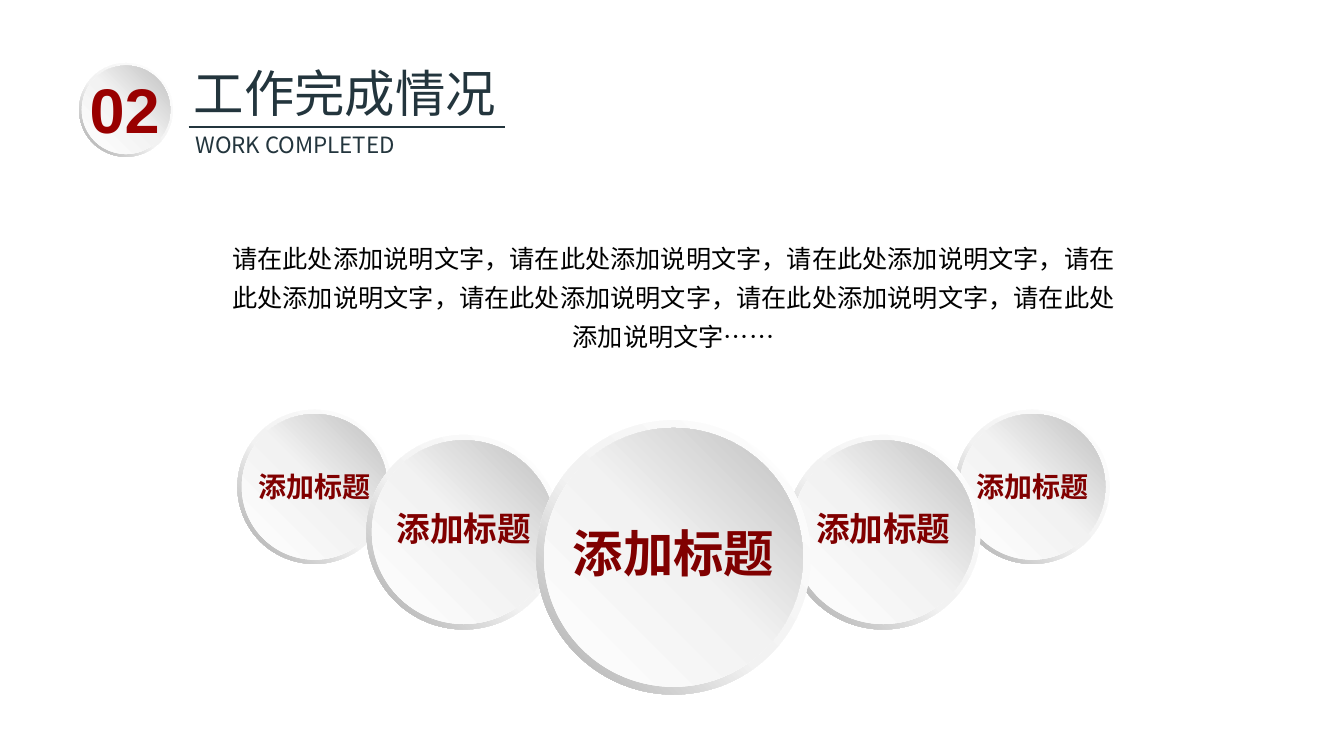
from lxml import etree
from pptx import Presentation
from pptx.dml.color import RGBColor
from pptx.enum import shapes, text
from pptx.oxml import parse_xml
from pptx.oxml.ns import nsdecls, qn
from pptx.util import Inches, Pt

CJK = "Noto Sans CJK SC"
SLATE = RGBColor(0x23, 0x35, 0x3D)
MAROON = RGBColor(0x80, 0x00, 0x00)
RED = RGBColor(0x99, 0x00, 0x00)
BLACK = RGBColor(0x00, 0x00, 0x00)
WHITE = RGBColor(0xFF, 0xFF, 0xFF)
PALE = RGBColor(0xF2, 0xF2, 0xF2)
SILVER = RGBColor(0xBF, 0xBF, 0xBF)
GREY = RGBColor(0xA6, 0xA6, 0xA6)

LEFT, CENTER, JUSTIFY = (text.PP_ALIGN.LEFT, text.PP_ALIGN.CENTER,
                         text.PP_ALIGN.JUSTIFY)
DISC_RATIO = 0.944


def add_label(parent, box, words, align, color, size, name=CJK, bold=False,
              wrap=False, spacing=None, insets=(0.1, 0.05)):
    tf = parent.add_textbox(*map(Inches, box)).text_frame
    side, edge = map(Inches, insets)
    frame = {"word_wrap": wrap, "auto_size": text.MSO_AUTO_SIZE.SHAPE_TO_FIT_TEXT,
             "margin_left": side, "margin_right": side,
             "margin_top": edge, "margin_bottom": edge}
    for key, value in frame.items():
        setattr(tf, key, value)
    p = tf.paragraphs[0]
    p.alignment, p.line_spacing = align, spacing
    r = p.add_run()
    r.text = words
    for key, value in {"size": Pt(size), "name": name, "bold": bold}.items():
        setattr(r.font, key, value)
    r.font.color.rgb = color
    etree.SubElement(r._r.get_or_add_rPr(), qn("a:ea")).set("typeface", name)


def add_button(parent, cx, cy, size):
    """Draw a shaded rim with a disc inside it, both centred on (cx, cy)."""
    layers = [
        (shapes.MSO_SHAPE.DONUT, size, [(0, WHITE), (55, PALE), (100, GREY)], 135),
        (shapes.MSO_SHAPE.OVAL, size * DISC_RATIO,
         [(0, WHITE), (51, PALE), (100, SILVER)], 315),
    ]
    for kind, width, stops, angle in layers:
        sp = parent.add_shape(kind, Inches(cx - width / 2), Inches(cy - width / 2),
                              Inches(width), Inches(width))
        if kind == shapes.MSO_SHAPE.DONUT:
            sp.adjustments[0] = 0.062
        sp.shadow.inherit = False
        sp.line.fill.background()
        marks = "".join(f'<a:gs pos="{pos * 1000}"><a:srgbClr val="{color}"/></a:gs>'
                        for pos, color in stops)
        sp._element.spPr.find(qn("a:prstGeom")).addnext(parse_xml(
            f'<a:gradFill {nsdecls("a")} rotWithShape="1"><a:gsLst>{marks}</a:gsLst>'
            f'<a:lin ang="{angle * 60000}" scaled="0"/></a:gradFill>'))


prs = Presentation()
prs.slide_width, prs.slide_height = Inches(13.33), Inches(7.5)
s = prs.slides.add_slide(prs.slide_layouts[6])

# Title buttons, outermost first so that the middle one lies on top:
# centre x, centre y, diameter, label box (top, width, height), text size
buttons = [
    (3.12, 4.83, 1.53, (4.61, 1.32, 0.44), 20),
    (10.24, 4.83, 1.53, (4.61, 1.32, 0.44), 20),
    (4.6, 5.28, 1.93, (4.99, 1.55, 0.5), 24),
    (8.76, 5.28, 1.93, (4.99, 1.55, 0.5), 24),
    (6.68, 5.53, 2.72, (5.13, 2.22, 0.71), 36),
]
for cx, cy, diameter, (top, width, height), size in buttons:
    group = s.shapes.add_group_shape().shapes
    add_button(group, cx, cy, diameter)
    add_label(group, (cx - width / 2, top, width, height), "添加标题", CENTER,
              MAROON, size, bold=True)

# Description
add_label(s.shapes, (2.13, 2.27, 9.1, 1.28),
          "，".join(["请在此处添加说明文字"] * 7) + "……", CENTER, BLACK, 18,
          wrap=True, spacing=1.3)

# Heading
add_label(s.shapes, (1.85, 0.58, 3.18, 0.68), "工作完成情况", LEFT, SLATE, 36,
          insets=(0.07, 0.04))
add_label(s.shapes, (1.87, 1.26, 3.14, 0.34), "WORK COMPLETED", JUSTIFY, SLATE, 16,
          wrap=True, insets=(0.07, 0.04))
rule = s.shapes.add_connector(shapes.MSO_CONNECTOR.STRAIGHT, Inches(1.87),
                              Inches(1.26), Inches(5.01), Inches(1.26))
rule.line.color.rgb = SLATE
rule.line.width = Pt(1.75)
etree.SubElement(rule._element.spPr, qn("a:effectLst"))

# Section number
badge = s.shapes.add_group_shape().shapes
add_button(badge, 1.25, 1.09, 0.93)
add_label(badge, (0.79, 0.65, 0.9, 0.86), "02", LEFT, RED, 45, name="Arial", bold=True)

prs.save("out.pptx")
